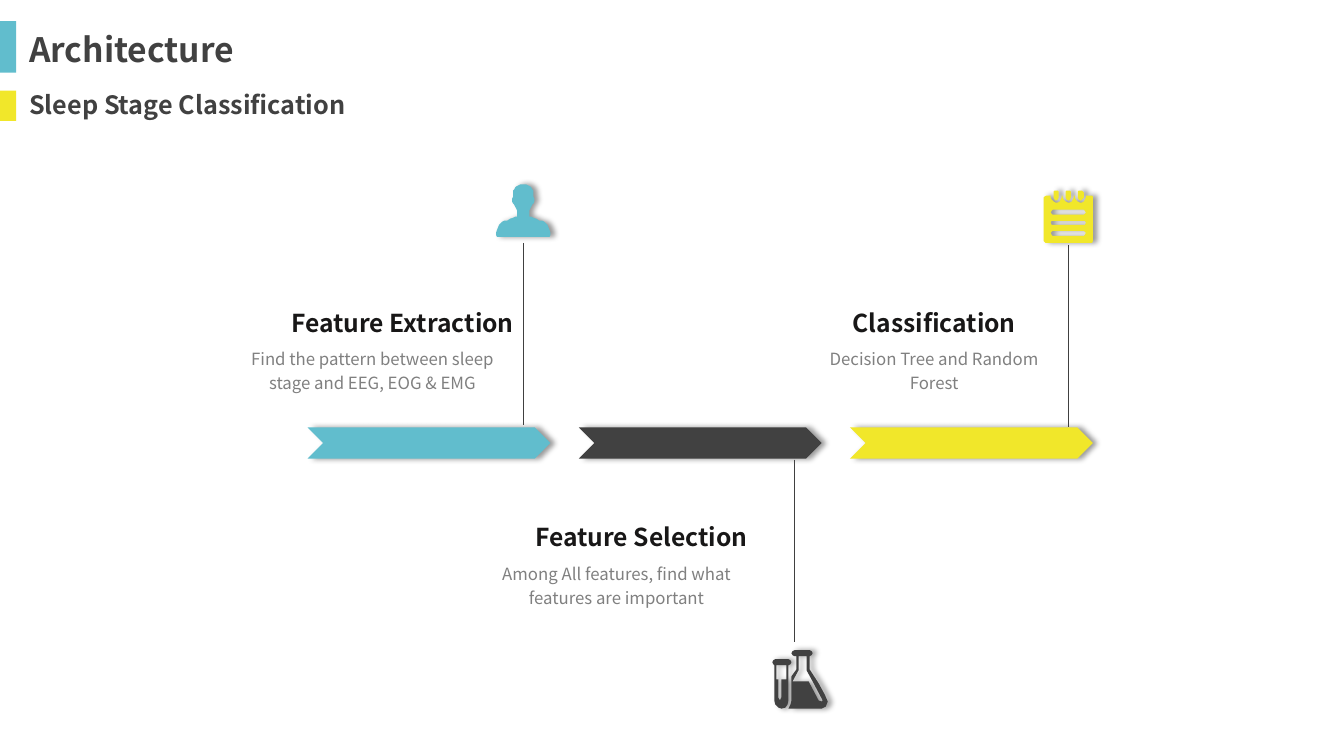
from dataclasses import dataclass

from lxml.etree import SubElement as Sub
from pptx import Presentation
from pptx.dml.color import RGBColor as RGB
from pptx.enum.shapes import MSO_CONNECTOR as Link, MSO_SHAPE as Kind
from pptx.enum.text import MSO_AUTO_SIZE as Fit, PP_ALIGN as Align
from pptx.oxml.ns import qn
from pptx.util import Inches, Pt


@dataclass(frozen=True)
class Theme:
    font: str = "Noto Sans CJK SC"
    blue: str = "61BDCD"
    dark: str = "414141"
    yellow: str = "F1E72A"
    rule: str = "404040"
    ink: str = "181717"
    grey: str = "808080"
    title: float = 24
    sub: float = 18
    head: float = 17.6
    body: float = 12


def grid(cells):
    """Length of a number of grid cells; the slide is 133.3 columns by 75 rows."""
    return Inches(cells / 10)


def write(box, text, size, color, bold=False, center=False, space=None,
          wrap=True, grow=False):
    frame = box.text_frame
    frame.word_wrap = wrap
    frame.auto_size = Fit.SHAPE_TO_FIT_TEXT if grow else Fit.NONE
    para = frame.paragraphs[0]
    para.alignment = Align.CENTER if center else Align.LEFT
    para.line_spacing = space
    run = para.add_run()
    run.text = text
    font = run.font
    font.name, font.size, font.bold = Theme.font, Pt(size), bold
    font.color.rgb = RGB.from_string(color)


class Deck:
    def __init__(self, theme):
        self.theme = theme
        self.file = Presentation()
        self.file.slide_width, self.file.slide_height = grid(133.3), grid(75)
        self.slide = self.file.slides.add_slide(self.file.slide_layouts[6])
        self.shapes = self.slide.shapes

    def paint(self, shape, color, raised):
        """Fill without outline; a raised shape casts a soft shadow to the right."""
        shape.fill.solid()
        shape.fill.fore_color.rgb = RGB.from_string(color)
        shape.line.fill.background()
        shape.shadow.inherit = False
        if raised:
            effects = shape._element.spPr.find(qn("a:effectLst"))
            cast = Sub(effects, qn("a:outerShdw"), blurRad=str(Pt(4)),
                       dist=str(Pt(3)), dir="0", algn="l", rotWithShape="0")
            black = Sub(cast, qn("a:srgbClr"), val="000000")
            Sub(black, qn("a:alpha"), val="40000")

    def block(self, kind, x, y, w, h, color, raised=False):
        shape = self.shapes.add_shape(kind, grid(x), grid(y), grid(w), grid(h))
        self.paint(shape, color, raised)

    def text(self, x, y, w, h, words, size, color, **form):
        box = self.shapes.add_textbox(grid(x), grid(y), grid(w), grid(h))
        write(box, words, size, color, **form)

    def stem(self, x, y, size):
        line = self.shapes.add_connector(
            Link.STRAIGHT, grid(x), grid(y), grid(x), grid(y + size))
        line.line.color.rgb = RGB.from_string(self.theme.rule)
        line.line.width = Pt(0.75)
        Sub(line._element.spPr, qn("a:effectLst"))

    def icon(self, x, y, rings, color):
        """Draw closed outlines, given in tenths of a cell; inner ones are holes."""
        pen = self.shapes.build_freeform(*rings[0][0], scale=grid(0.1))
        for n, ring in enumerate(rings):
            if n:
                pen.move_to(*ring[0])
            pen.add_line_segments(ring[1:], close=True)
        self.paint(pen.convert_to_shape(grid(x), grid(y)), color, True)


def person():
    half = [(0, 0), (3, 0), (5, 1), (7, 2), (8, 3), (9, 5), (10, 6), (10, 12),
            (10.5, 14), (10.5, 17), (10, 19), (9, 20), (8, 22), (7, 24),
            (6, 26), (6, 32), (8, 32), (10, 33), (13, 34), (16, 36), (19, 36),
            (21, 37), (24, 40), (26, 45), (27, 48), (27, 50), (26, 52), (25, 52)]
    right = [(27 + x, y) for x, y in half]
    left = [(27 - x, y) for x, y in reversed(half[1:])]
    return [right + left]


def notepad():
    notch = [(-5.5, 5), (-5.5, 7), (-4.5, 9), (-3, 11), (-1, 12),
             (1, 12), (3, 11), (4.5, 9), (5.5, 7), (5.5, 5)]
    coil = [(0, 0), (1.5, 0), (2.5, 1), (2.7, 2), (2.7, 7), (1.5, 9), (0, 10),
            (-1.5, 9), (-2.7, 7), (-2.7, 2), (-2.5, 1), (-1.5, 0)]
    mids = [12.5, 24.7, 36.9]
    cuts = [(m + x, y) for m in mids for x, y in notch]
    sheet = [(3, 5), *cuts, (47, 5), (48, 5), (49, 6), (49, 50), (48, 52),
             (2, 52), (0, 50), (0, 7), (1, 5.5)]
    slots = [[(9, y), (8, y + 1), (7, y + 2.5), (8, y + 4), (9, y + 5),
              (40, y + 5), (41, y + 4), (42, y + 2.5), (41, y + 1), (40, y)]
             for y in (19, 29.5, 40)]
    coils = [[(m + x, y) for x, y in coil] for m in mids]
    return [sheet, *slots, *coils]


def flasks():
    flask = [(37, 19), (37, 6), (39, 5), (40, 3), (39, 1), (37, 0), (22, 0),
             (20, 1), (19, 3), (20, 5), (22, 6), (24, 6), (24, 19), (19, 26),
             (19, 50), (18, 54), (16, 57.5), (49, 57.5), (53, 56), (55, 51),
             (52, 44), (46, 33)]
    space = [(49, 51), (46, 50), (36, 31), (20, 31), (26, 20), (26, 6),
             (34, 6), (34, 20), (40, 31), (49, 48), (50, 49.5)]
    tube = [(16, 15), (18, 14), (19, 12), (18, 10), (16, 9), (3, 9), (1, 10),
            (0, 12), (1, 14), (2, 15), (2, 50), (3, 54), (6, 57), (9, 57.5),
            (13, 57), (15, 54), (16, 50)]
    glass = [(14, 29), (9, 29), (9, 47), (8, 49), (7, 49), (6, 47), (6, 29),
             (4, 29), (4, 15), (14, 15)]
    return [flask, space, tube, glass]


def main():
    look = Theme()
    deck = Deck(look)

    deck.block(Kind.RECTANGLE, 0, 2.1, 1.6, 5.1, look.blue)
    deck.block(Kind.RECTANGLE, 0, 9, 1.6, 3, look.yellow)
    deck.text(1.9, 2.4, 28.9, 5, "Architecture", look.title, look.dark,
              bold=True, grow=True)
    deck.text(1.9, 8.4, 61.5, 4, "Sleep Stage Classification", look.sub,
              look.dark, bold=True, grow=True)

    # heading, body, colour, text corner, stem top, icon outlines and corner
    steps = [
        ("Feature Extraction",
         "Find the pattern between sleep stage and EEG, EOG & EMG",
         look.blue, (27.9, 30), (51.9, 24.1), person(), (49.2, 18.3)),
        ("Feature Selection",
         "Among All features, find what features are important",
         look.dark, (52.1, 51.3), (78.8, 45.6), flasks(), (76.6, 64.5)),
        ("Classification", "Decision Tree and Random Forest",
         look.yellow, (83.6, 30), (106, 24.3), notepad(), (103.5, 18.9)),
    ]
    for n, (head, body, color, (x, y), stem, rings, spot) in enumerate(steps):
        deck.block(Kind.CHEVRON, 30.5 + 26.9 * n, 42.4, 24.1, 3.1, color,
                   raised=True)
        deck.stem(*stem, 18.1)
        deck.icon(*spot, rings, color)
        deck.text(x - 4.8, y + 3.7, 27.7, 6.1, body, look.body, look.grey,
                  center=True, space=1.2)
        deck.text(x, y, 24, 3.8, head, look.head, look.ink, bold=True,
                  wrap=False)

    deck.file.save("out.pptx")


if __name__ == "__main__":
    main()
